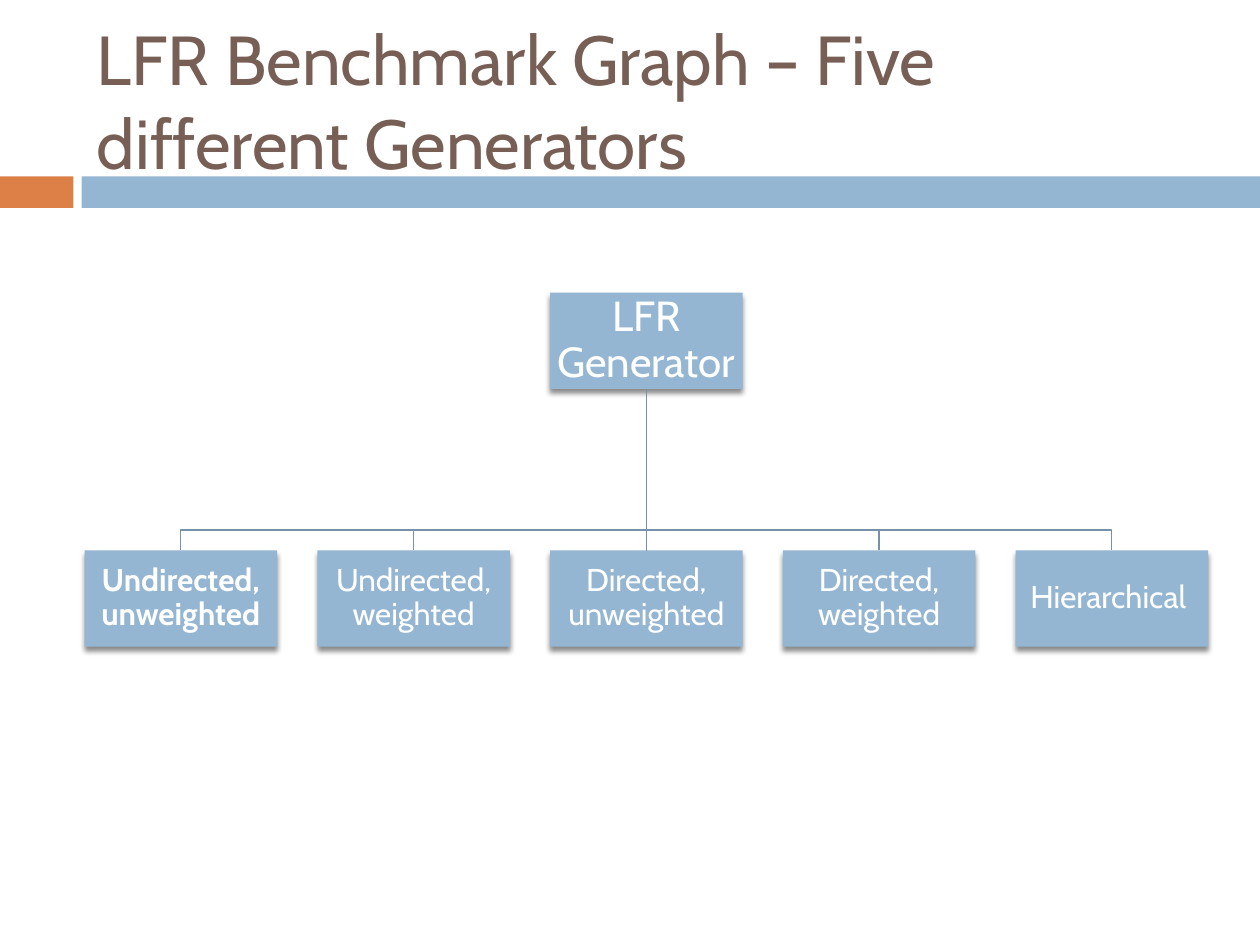
from lxml import etree
from pptx import Presentation
from pptx import util as u
from pptx.dml.color import RGBColor
from pptx.enum import shapes, text
from pptx.oxml import ns, parse_xml

ORANGE = RGBColor(0xDD, 0x80, 0x47)
BLUE = RGBColor(0x94, 0xB6, 0xD2)
LINE = RGBColor(0x77, 0x92, 0xA8)
BROWN = RGBColor(0x77, 0x5F, 0x55)
WHITE = RGBColor(0xFF, 0xFF, 0xFF)

BOX_W, BOX_H, STEP = 110, 55, 133
LEFT, ROOT_TOP, LEAF_TOP, BUS_Y = 48.3, 167.3, 314.6, 302.9
LEAVES = ["Undirected, unweighted", "Undirected, weighted", "Directed, unweighted",
          "Directed, weighted", "Hierarchical "]
SHADOW = (f'<a:effectLst {ns.nsdecls("a")}>'
          f'<a:outerShdw blurRad="{u.Pt(3)}" dist="{u.Pt(2.4)}" dir="5400000" rotWithShape="0">'
          '<a:srgbClr val="000000"><a:alpha val="45000"/></a:srgbClr>'
          '</a:outerShdw></a:effectLst>')


class Deck:
    def __init__(self, width, height):
        self.prs = Presentation()
        self.prs.slide_width, self.prs.slide_height = u.Pt(width), u.Pt(height)
        self.s = self.prs.slides.add_slide(self.prs.slide_layouts[6])
        self.font = "Cabin"

    def set_text(self, sp, words, inset, align, spacing, color, **font):
        tf = sp.text_frame
        frame = {"word_wrap": True, "vertical_anchor": text.MSO_ANCHOR.MIDDLE}
        frame.update({f"margin_{side}": u.Pt(inset)
                      for side in ("left", "top", "right", "bottom")})
        for name, value in frame.items():
            setattr(tf, name, value)
        p = tf.paragraphs[0]
        p.alignment, p.line_spacing = align, spacing
        r = p.add_run()
        r.text = words
        r.font.color.rgb = color
        for name, value in {"name": self.font, **font}.items():
            setattr(r.font, name, value)

    def title(self, words, *at):
        sp = self.s.shapes.add_textbox(*map(u.Pt, at))
        self.set_text(sp, words, 7.2, text.PP_ALIGN.LEFT, 1.0, BROWN, size=u.Pt(39.6))

    def rect(self, color, *at):
        sp = self.s.shapes.add_shape(shapes.MSO_SHAPE.RECTANGLE, *map(u.Pt, at))
        sp.shadow.inherit = False
        sp.fill.solid()
        sp.fill.fore_color.rgb = color
        sp.line.fill.background()
        return sp

    def node(self, words, x, y, size, inset, bold=False):
        sp = self.rect(BLUE, x, y, BOX_W, BOX_H)
        pr = sp.element.spPr
        pr.replace(pr.find(ns.qn("a:effectLst")), parse_xml(SHADOW))
        self.set_text(sp, words, inset, text.PP_ALIGN.CENTER, 0.9, WHITE,
                      size=u.Pt(size), bold=bold)
        return sp

    def branch(self, parent, child):
        """Join two nodes: straight if aligned, otherwise bent at the shared bus."""
        x1, y1 = parent.left + parent.width // 2, parent.top + parent.height
        x2, y2 = child.left + child.width // 2, child.top
        if x1 == x2:
            sp = self.s.shapes.add_connector(shapes.MSO_CONNECTOR.STRAIGHT, x1, y1, x2, y2)
            sp.begin_connect(parent, 2)
            sp.end_connect(child, 0)
        else:
            outline = self.s.shapes.build_freeform(x1, y1)
            outline.add_line_segments([(x1, u.Pt(BUS_Y)), (x2, u.Pt(BUS_Y)), (x2, y2)],
                                      close=False)
            sp = outline.convert_to_shape()
            sp.fill.background()
        sp.line.color.rgb = LINE
        sp.line.width = u.Pt(0.79)
        etree.SubElement(sp.element.spPr, ns.qn("a:effectLst"))


def main():
    deck = Deck(720, 540)
    deck.rect(ORANGE, 0, 100.8, 42, 18)
    deck.rect(BLUE, 46.6, 100.8, 673.4, 18)
    deck.title("LFR Benchmark Graph – Five different Generators", 48.3, 18, 642, 78)

    root = deck.node("LFR Generator", LEFT + 2 * STEP, ROOT_TOP, 24, 1.2)
    leaves = [deck.node(words, LEFT + i * STEP, LEAF_TOP, 18, 0.9, bold=i == 0)
              for i, words in enumerate(LEAVES)]
    for leaf in leaves:
        deck.branch(root, leaf)
    deck.prs.save("out.pptx")


if __name__ == "__main__":
    main()
